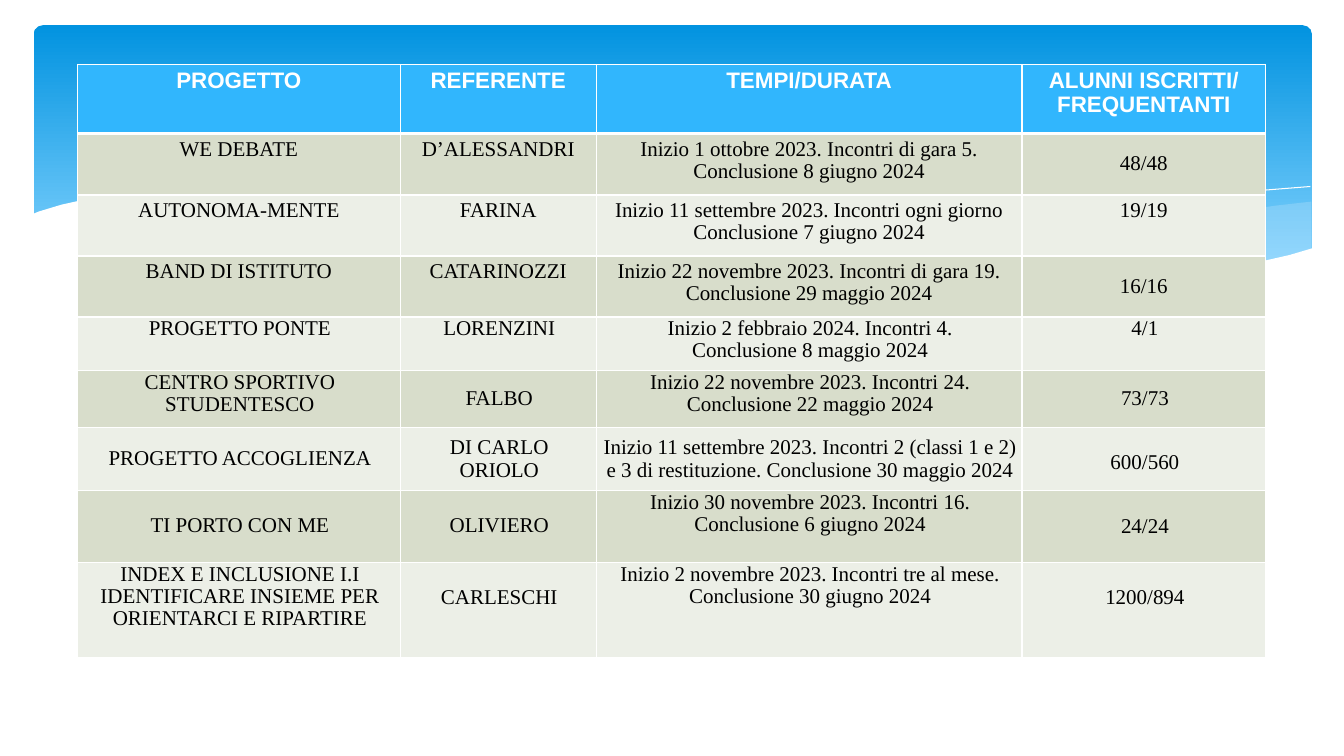
from lxml.etree import SubElement
from pptx import Presentation
from pptx.dml.color import RGBColor
from pptx.enum.shapes import MSO_SHAPE
from pptx.enum.text import MSO_ANCHOR, PP_ALIGN
from pptx.oxml import parse_xml
from pptx.oxml.ns import nsdecls, qn
from pptx.util import Pt

HEAD = ["PROGETTO", "REFERENTE", "TEMPI/DURATA", "ALUNNI ISCRITTI/\nFREQUENTANTI"]
# Each project: four texts, then how each cell sits: t top, m middle, d one line down
ROWS = [
    ("WE DEBATE", "D’ALESSANDRI",
     "Inizio 1 ottobre 2023. Incontri di gara 5. Conclusione 8 giugno 2024", "48/48", "tttm"),
    ("AUTONOMA-MENTE", "FARINA",
     "Inizio 11 settembre 2023. Incontri ogni giorno Conclusione 7 giugno 2024", "19/19", "tttt"),
    ("BAND DI ISTITUTO", "CATARINOZZI",
     "Inizio 22 novembre 2023. Incontri di gara 19. Conclusione 29 maggio 2024", "16/16", "tttm"),
    ("PROGETTO PONTE", "LORENZINI",
     "Inizio 2 febbraio 2024. Incontri 4.\nConclusione 8 maggio 2024", "4/1", "tttt"),
    ("CENTRO SPORTIVO STUDENTESCO", "FALBO",
     "Inizio 22 novembre 2023. Incontri 24. Conclusione 22 maggio 2024", "73/73", "tmtm"),
    ("PROGETTO ACCOGLIENZA", "DI CARLO\nORIOLO",
     "Inizio 11 settembre 2023. Incontri 2 (classi 1 e 2) e 3 di restituzione. "
     "Conclusione 30 maggio 2024", "600/560", "mmmd"),
    ("TI PORTO CON ME", "OLIVIERO",
     "Inizio 30 novembre 2023. Incontri 16. Conclusione 6 giugno 2024", "24/24", "ddtm"),
    ("INDEX E INCLUSIONE I.I IDENTIFICARE INSIEME PER ORIENTARCI E RIPARTIRE", "CARLESCHI",
     "Inizio 2 novembre 2023. Incontri tre al mese. Conclusione 30 giugno 2024",
     "1200/894", "tdtd"),
]
WIDTHS = [230.4, 140.2, 304, 174.2]
HEIGHTS = [49.2, 44, 43.6, 43.6, 38.4, 40.8, 45, 51.4, 67.9]
LEFT, TOP = 55.4, 46.1
WIDE, TIGHT = (7.2, 3.6, 7.2, 3.6), (2.9, 0.7, 1.4, 0.7)
LINE = 16.4
WHITE, BLUE, BANDS = "FFFFFF", "31B6FD", ("D8DDCB", "ECEFE7")

# Waves: points, fill, opacity in percent (no fill means a thin white line)
WAVES = [
    ([(936.7, 144), (911, 146.9), (883.4, 151.2), (855.4, 155.5), (825.8, 160.6),
      (772.6, 170.6), (723.6, 178.6), (677.5, 185), (635, 190.8), (676.8, 194.4),
      (726.5, 198), (771.1, 200.2), (810.7, 199.4), (845.3, 197.3), (877, 193.7),
      (905, 186.5), (936.7, 177.8)], "C6E7FC", 29),
    ([(856.8, 196.6), (803.5, 190.8), (744.5, 182.9), (677.5, 172.8), (604.1, 159.8),
      (560.2, 151.9), (519.1, 146.2), (481.7, 141.1), (445.7, 137.5), (403.2, 134.6),
      (347, 133.2), (301, 135.4), (275, 137.5), (328.3, 143.3), (388.1, 151.9),
      (470.9, 167), (543.6, 178.6), (609.1, 187.9), (666.7, 194.4), (718.6, 198.7),
      (774.7, 200.2), (823, 199.4)], "C6E7FC", 40),
    ([(296.6, 140.4), (329.8, 136.8), (385.2, 134.6), (450, 136.1), (534.2, 141.8),
      (610.6, 149.8), (698.4, 162.7), (797.8, 180.7), (871.2, 195.8)], None, 0),
    ([(589, 185), (645.1, 173.5), (717.8, 160.6), (802.8, 146.9), (873.4, 138.2),
      (936, 133.2)], None, 0),
    ([(22.3, 153.4), (27.4, 151.2), (43.9, 146.2), (56.9, 143.3), (72.7, 140.4),
      (102.2, 136.1), (139.7, 133.2), (185.8, 132.5), (239.8, 133.9), (303.1, 139.7),
      (375.1, 149), (429.1, 158.4), (508.3, 172.1), (578.9, 182.9), (641.5, 190.8),
      (697.7, 195.8), (746.6, 198.7), (789.8, 199.4), (828.7, 197.3), (862.6, 193.7),
      (892.8, 188.6), (920.9, 182.2), (938.2, 177.1), (938.2, 236.9), (22.3, 236.9)],
     WHITE, 100),
]


def paint(color, code):
    color.rgb = RGBColor.from_string(code)


def add_sky(slide):
    sky = slide.shapes.add_shape(MSO_SHAPE.ROUNDED_RECTANGLE,
                                 Pt(24), Pt(18), Pt(913), Pt(194.4))
    sky.adjustments[0] = 0.034
    sky.shadow.inherit = False
    sky.line.fill.background()
    sky.fill.gradient()
    sky.fill.gradient_angle = 270
    for stop, code, place in zip(sky.fill.gradient_stops, ("0293E0", "83D3FE"), (0, 0.9)):
        paint(stop.color, code)
        stop.position = place


def add_wave(slide, points, code, alpha):
    path = [(Pt(x), Pt(y)) for x, y in points]
    pen = slide.shapes.build_freeform(*path[0])
    pen.add_line_segments(path[1:], close=bool(code))
    wave = pen.convert_to_shape()
    wave.shadow.inherit = False
    if not code:
        wave.fill.background()
        paint(wave.line.color, WHITE)
        wave.line.width = Pt(0)
        return
    wave.line.fill.background()
    wave.fill.solid()
    paint(wave.fill.fore_color, code)
    tint = wave._element.spPr.find(qn("a:solidFill"))[0]
    SubElement(tint, qn("a:alpha")).set("val", str(alpha * 1000))


def add_edges(cell, above, below):
    props = cell._tc.get_or_add_tcPr()
    for i, (side, width) in enumerate(zip("LRTB", (1, 1, above, below))):
        props.insert(i, parse_xml(
            f'<a:ln{side} {nsdecls("a")} w="{Pt(width)}"><a:solidFill>'
            f'<a:srgbClr val="{WHITE}"/></a:solidFill></a:ln{side}>'))


def fill_cell(cell, text, row, seat):
    head = row == 0
    left, top, right, low = WIDE if row < 4 else TIGHT
    cell.margin_left, cell.margin_right = Pt(left), Pt(right)
    cell.margin_top = Pt(top + LINE if seat == "d" else top)
    cell.margin_bottom = Pt(low)
    cell.vertical_anchor = MSO_ANCHOR.MIDDLE if seat == "m" else MSO_ANCHOR.TOP
    cell.fill.solid()
    paint(cell.fill.fore_color, BLUE if head else BANDS[(row - 1) % 2])
    add_edges(cell, 3 if row == 1 else 1, 3 if head else 1)
    cell.text_frame.text = text
    for para in cell.text_frame.paragraphs:
        para.alignment = PP_ALIGN.CENTER
        para.line_spacing = 0.95
        for run in para.runs:
            run.font.name = "Arial" if head else "Times New Roman"
            run.font.size = Pt(16 if head else 15)
            run.font.bold = head
            paint(run.font.color, WHITE if head else "000000")


def add_grid(slide):
    data = [(*HEAD, "tttt"), *ROWS]
    grid = slide.shapes.add_table(len(data), len(WIDTHS), Pt(LEFT), Pt(TOP),
                                  Pt(sum(WIDTHS)), Pt(sum(HEIGHTS))).table
    for col, width in zip(grid.columns, WIDTHS):
        col.width = Pt(width)
    for r, (*texts, seats) in enumerate(data):
        grid.rows[r].height = Pt(HEIGHTS[r])
        for c, (text, seat) in enumerate(zip(texts, seats)):
            fill_cell(grid.cell(r, c), text, r, seat)


def main():
    deck = Presentation()
    deck.slide_width, deck.slide_height = Pt(960), Pt(540)
    slide = deck.slides.add_slide(deck.slide_layouts[6])
    add_sky(slide)
    for wave in WAVES:
        add_wave(slide, *wave)
    add_grid(slide)
    deck.save("out.pptx")


if __name__ == "__main__":
    main()
